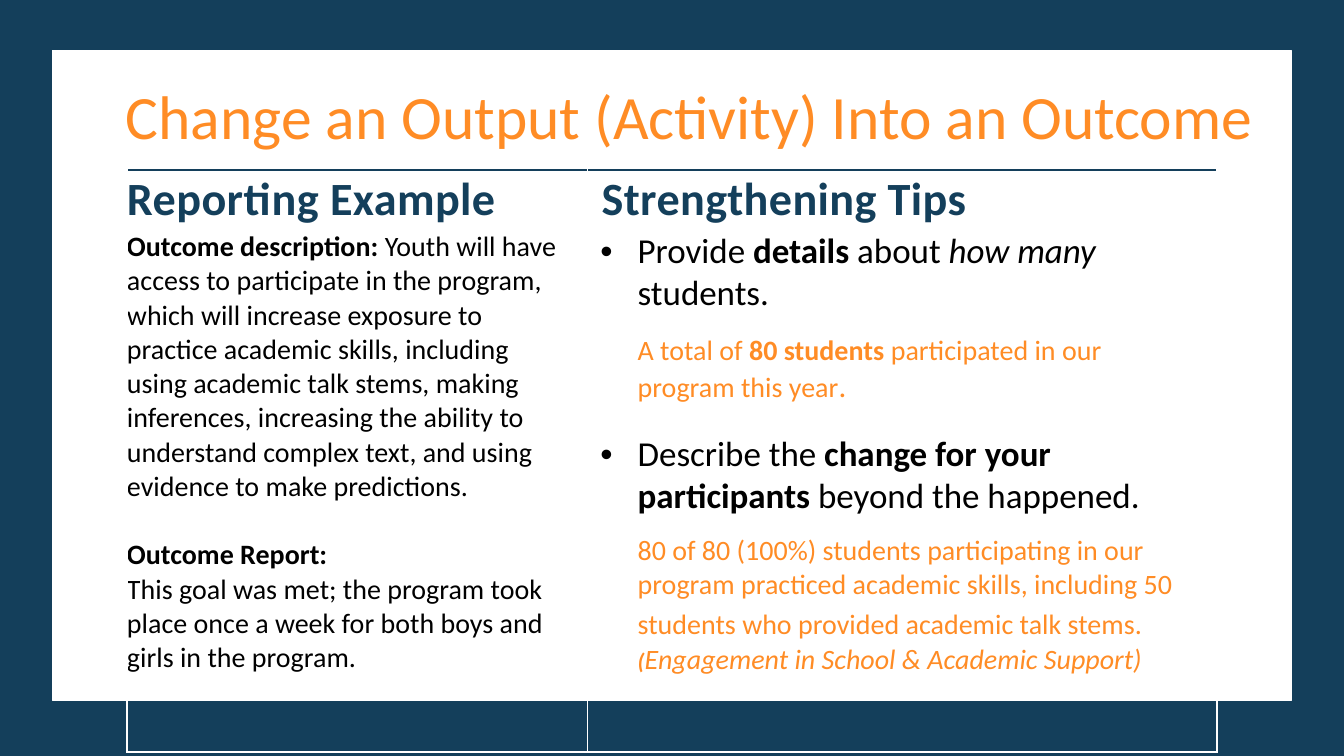
from pptx import Presentation
from pptx.dml.color import RGBColor
from pptx.enum.shapes import MSO_SHAPE
from pptx.enum.text import MSO_ANCHOR, MSO_AUTO_SIZE
from pptx.oxml import parse_xml
from pptx.oxml.ns import nsdecls
from pptx.util import Cm, Pt

NAVY, ORANGE, WHITE, BLACK = "143F5B", "FF8C25", "FFFFFF", "000000"
BOLD, ITALIC = {"bold": True}, {"italic": True}
HEAD = {"size": Pt(33), "bold": True}
BODY = {"size": Pt(20)}
TIP = {"size": Pt(25)}

LEFT = [
    (BODY, BLACK, {}, [
        ("Outcome description: ", BOLD),
        ("Youth will have access to participate in the program, which will "
         "increase exposure to practice academic skills, including using "
         "academic talk stems, making inferences, increasing the ability to "
         "understand complex text, and using evidence to make predictions.", {})]),
    (BODY, BLACK, {"before": 24.4}, [("Outcome Report:", BOLD)]),
    (BODY, BLACK, {}, [
        ("This goal was met; the program took place once a week for both boys "
         "and girls in the program.", {})]),
]
BULLET = {"left": 1.27, "hang": -0.94, "mark": "•"}
RIGHT = [
    (TIP, BLACK, BULLET, [
        ("Provide ", {}), ("details", BOLD), (" about ", {}),
        ("how many ", ITALIC), ("students.", {})]),
    (BODY, ORANGE, {"left": 1.27, "before": 13.4}, [
        ("A total of ", {}), ("80 students ", BOLD),
        ("participated in our program this year", {}), (".", {"size": Pt(22)})]),
    (TIP, BLACK, {**BULLET, "before": 19.5}, [
        ("Describe the ", {}), ("change for your participants ", BOLD),
        ("beyond the happened.", {})]),
    (BODY, ORANGE, {"left": 1.27, "before": 11}, [
        ("80 of 80 (100%) students participating in our program practiced "
         "academic skills, including 50 students who provided academic talk "
         "stems.", {}),
        (" ", {"size": Pt(24)}),
        ("(", {"size": Pt(16), "bold": True, "italic": True}),
        ("Engagement in School & Academic Support)", ITALIC)]),
]


def rgb(code):
    return RGBColor.from_string(code)


def style(obj, look):
    for key, val in look.items():
        setattr(obj, key, val)


def panel(slide, box, fill):
    shape = slide.shapes.add_shape(MSO_SHAPE.RECTANGLE, *map(Cm, box))
    shape.shadow.inherit = False
    shape.fill.solid()
    shape.fill.fore_color.rgb = rgb(fill)
    shape.line.color.rgb = rgb(fill)
    shape.line.width = Pt(0.85)


def layout(para, left=0, hang=0, mark=None, before=0):
    props = para._p.get_or_add_pPr()
    props.set("marL", str(Cm(left)))
    props.set("indent", str(Cm(hang)))
    if mark:
        props.append(parse_xml(f'<a:buFont {nsdecls("a")} typeface="Arial"/>'))
        props.append(parse_xml(f'<a:buChar {nsdecls("a")} char="{mark}"/>'))
    if before:
        para.space_before = Pt(before)


def write(frame, paras, track=0):
    for num, (base, color, form, runs) in enumerate(paras):
        para = frame.add_paragraph() if num else frame.paragraphs[0]
        layout(para, **form)
        for text, look in runs:
            run = para.add_run()
            run.text = text
            style(run.font, {"name": "Calibri", "bold": False, **base, **look})
            run.font.color.rgb = rgb(color)
            if track:
                run._r.get_or_add_rPr().set("spc", str(track))


def rule(cell, color, width):
    cell._tc.get_or_add_tcPr().insert(0, parse_xml(
        f'<a:lnT {nsdecls("a")} w="{Pt(width)}"><a:solidFill>'
        f'<a:srgbClr val="{color}"/></a:solidFill></a:lnT>'))


def fill_cell(cell, paras, anchor, right, track=0):
    style(cell, {"margin_left": 0, "margin_top": 0, "margin_bottom": 0,
                 "margin_right": Cm(right), "vertical_anchor": anchor})
    cell.fill.background()
    write(cell.text_frame, paras, track)


def add_grid(slide):
    cols, rows = (11.6, 15.87), (1.5, 13.16)
    grid = slide.shapes.add_table(2, 2, Cm(3.2), Cm(4.29),
                                  Cm(sum(cols)), Cm(sum(rows))).table
    style(grid, {"first_row": False, "horz_banding": False})
    for col, wide in zip(grid.columns, cols):
        col.width = Cm(wide)
    for row, high in zip(grid.rows, rows):
        row.height = Cm(high)
    parts = (("Reporting Example", 0, LEFT), ("Strengthening Tips", 0.36, RIGHT))
    for num, (title, left, body) in enumerate(parts):
        head = grid.cell(0, num)
        fill_cell(head, [(HEAD, NAVY, {"left": left}, [(title, {})])],
                  MSO_ANCHOR.MIDDLE, 0.05, 30)
        rule(head, NAVY, 1.5)
        fill_cell(grid.cell(1, num), body, MSO_ANCHOR.TOP, 0.36)


def add_title(slide, text):
    box = slide.shapes.add_textbox(Cm(2.92), Cm(1.83), Cm(29.97), Cm(2.13))
    style(box.text_frame, {"word_wrap": True,
                           "auto_size": MSO_AUTO_SIZE.SHAPE_TO_FIT_TEXT})
    write(box.text_frame, [({"size": Pt(44)}, ORANGE, {}, [(text, {})])])


def main():
    deck = Presentation()
    style(deck, {"slide_width": Cm(33.87), "slide_height": Cm(19.05)})
    slide = deck.slides.add_slide(deck.slide_layouts[6])
    panel(slide, (0, 0, 33.87, 19.05), NAVY)
    panel(slide, (1.32, 1.27, 31.22, 16.38), WHITE)
    add_grid(slide)
    add_title(slide, "Change an Output (Activity) Into an Outcome")
    deck.save("out.pptx")


if __name__ == "__main__":
    main()
